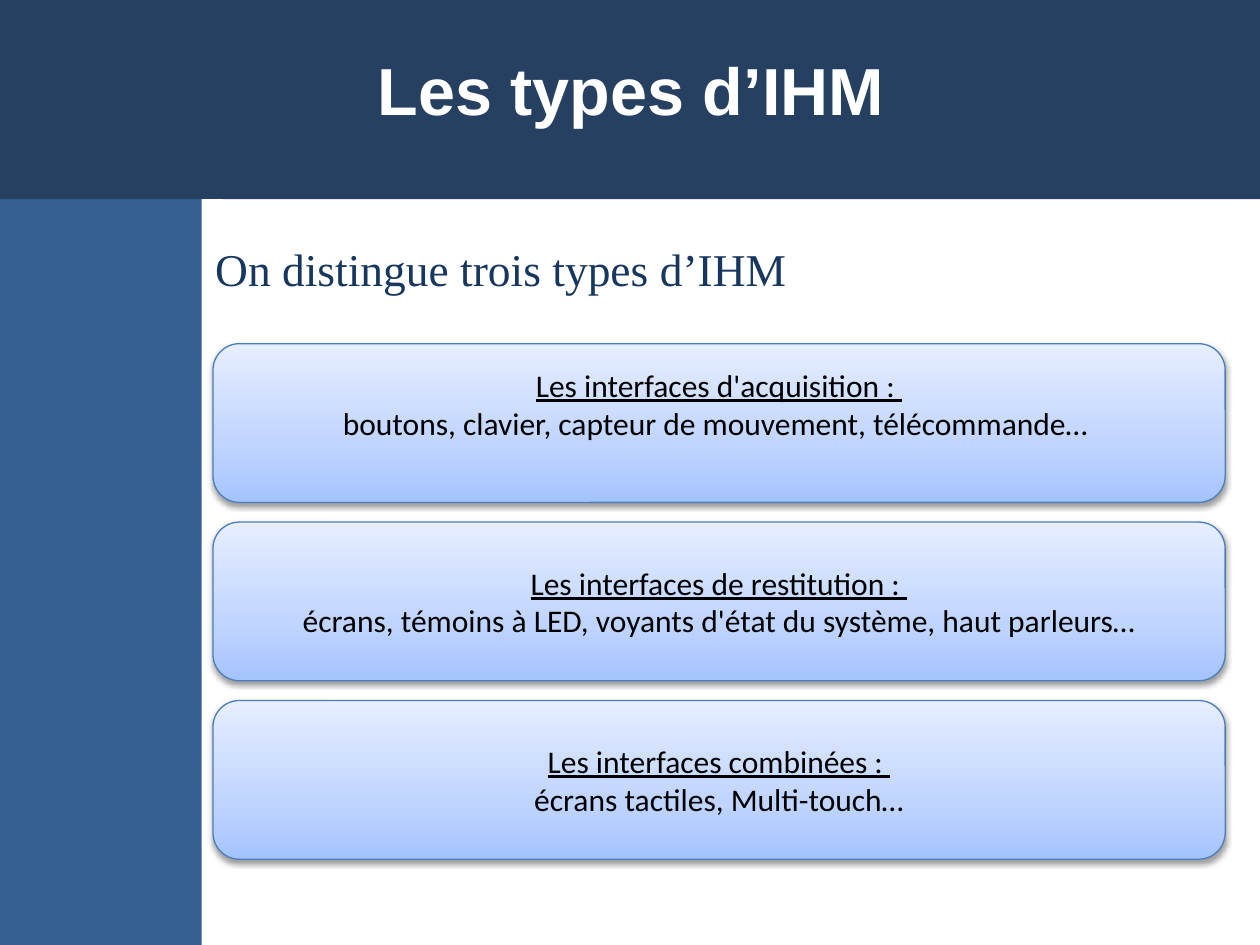
from lxml import etree
from pptx import Presentation
from pptx.dml.color import RGBColor
from pptx.enum import shapes, text
from pptx.oxml import ns
from pptx.util import Pt

TITLE = "Les types d’IHM"
INTRO = "On distingue trois types d’IHM"
# heading, examples, bottom inset (the first card's text sits higher)
CARDS = [
    ("Les interfaces d'acquisition : ",
     "boutons, clavier, capteur de mouvement, télécommande… ", 25.6),
    ("Les interfaces de restitution : ",
     "écrans, témoins à LED, voyants d'état du système, haut parleurs…", 3.6),
    ("Les interfaces combinées : ", "écrans tactiles, Multi-touch…", 3.6),
]
# left, top, width, height, colour
PANELS = [
    (0, 113.76, 120.24, 426.24, "376092"),
    (0, 0, 720, 113.76, "254061"),
    (115.2, 113.76, 12.24, 426.24, "FFFFFF"),
]
CARD_LEFT, CARD_TOP, CARD_WIDTH, CARD_HEIGHT, CARD_STEP = 121.7, 196.4, 578.4, 90.7, 101.95
GRADIENT = [(0, "A4C4FF"), (35, "BFD4FF"), (100, "E6EEFF")]


def color(value):
    return RGBColor.from_string(value)


def child(parent, tag, **attributes):
    return etree.SubElement(parent, ns.qn("a:" + tag), attributes)


def add_block(kind, left, top, width, height):
    block = slide.shapes.add_shape(kind, Pt(left), Pt(top), Pt(width), Pt(height))
    block.shadow.inherit = False
    return block


def style(para, font_name, size, tint, **options):
    for span in para.runs:
        font = span.font
        font.name, font.size, font.color.rgb = font_name, Pt(size), color(tint)
        for name, value in options.items():
            setattr(font, name, value)


def add_text(words, left, top, width, height):
    box = slide.shapes.add_textbox(Pt(left), Pt(top), Pt(width), Pt(height))
    box.text_frame.word_wrap = True
    box.text_frame.text = words
    return box.text_frame


def paint_card(card):
    """Vertical three-stop gradient, thin outline and soft drop shadow."""
    card.fill.gradient()
    card.fill.gradient_angle = 90
    card.line.color.rgb = color("4B7EBC")
    card.line.width = Pt(0.75)
    properties = card._element.spPr
    stops = properties.find(".//" + ns.qn("a:gsLst"))
    for stop in list(stops):
        stops.remove(stop)
    for position, tint in GRADIENT:
        stop = child(stops, "gs", pos=str(position * 1000))
        child(stop, "srgbClr", val=tint)
    shadow = child(properties.find(ns.qn("a:effectLst")), "outerShdw",
                   blurRad=str(Pt(3.1)), dist=str(Pt(1.6)), dir="5400000", rotWithShape="0")
    child(child(shadow, "srgbClr", val="000000"), "alpha", val="38000")


deck = Presentation()
deck.slide_width, deck.slide_height = Pt(720), Pt(540)
slide = deck.slides.add_slide(deck.slide_layouts[6])

# Background panels
for *place, tint in PANELS:
    panel = add_block(shapes.MSO_SHAPE.RECTANGLE, *place)
    panel.fill.solid()
    panel.fill.fore_color.rgb = color(tint)
    panel.line.fill.background()

# Title and introduction
title = add_text(TITLE, 36.7, 20.9, 648, 59.8)
title.vertical_anchor = text.MSO_ANCHOR.MIDDLE
title.paragraphs[0].alignment = text.PP_ALIGN.CENTER
style(title.paragraphs[0], "Arial", 38, "FFFFFF", bold=True)
intro = add_text(INTRO, 115.9, 134, 568, 44)
style(intro.paragraphs[0], "Times New Roman", 26, "17375E")

# Cards
for index, (heading, examples, inset) in enumerate(CARDS):
    card = add_block(shapes.MSO_SHAPE.ROUNDED_RECTANGLE, CARD_LEFT,
                     CARD_TOP + index * CARD_STEP, CARD_WIDTH, CARD_HEIGHT)
    paint_card(card)
    frame = card.text_frame
    frame.word_wrap = True
    frame.vertical_anchor = text.MSO_ANCHOR.MIDDLE
    frame.margin_bottom = Pt(inset)
    frame.text = heading + "\n" + examples
    for para, underline in zip(frame.paragraphs, (True, False)):
        para.alignment = text.PP_ALIGN.CENTER
        style(para, "Calibri", 18, "000000", underline=underline)

deck.save("out.pptx")
